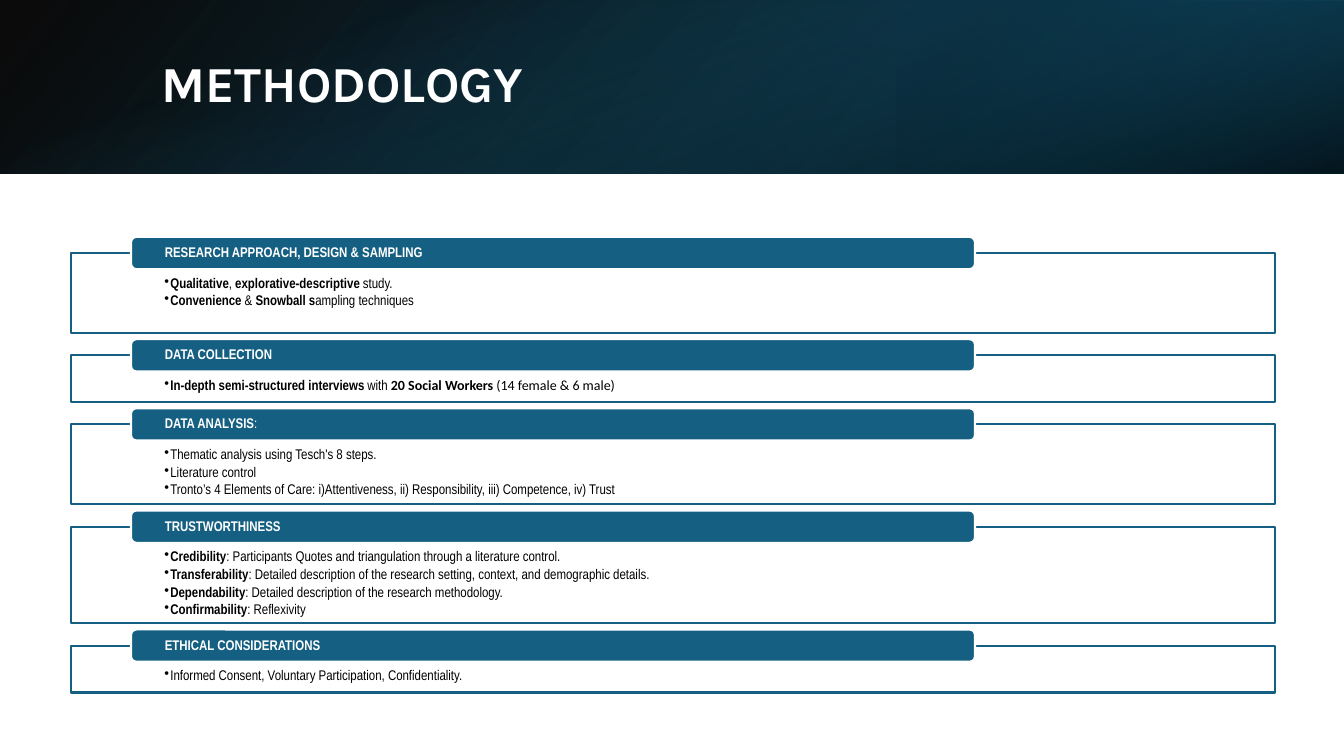
"""Build the Methodology slide: a gradient header above five labelled boxes."""
from lxml.etree import SubElement
from pptx import Presentation
from pptx.dml.color import RGBColor
from pptx.enum.shapes import MSO_SHAPE as Preset
from pptx.enum.text import MSO_ANCHOR as Anchor, MSO_AUTO_SIZE as AutoSize, PP_ALIGN as Align
from pptx.oxml.ns import qn
from pptx.util import Inches, Pt

TITLE = "METHODOLOGY"
NARROW, WIDE = "Arial Narrow", "Calibri"
BLUE, WHITE, BLACK = "156082", "FFFFFF", "000000"

# Each section: heading runs, rows of room, bullets; each run: text, bold, font.
SECTIONS = [
    ([("RESEARCH APPROACH, DESIGN & SAMPLING", True, NARROW)], 3, [
        [("Qualitative", True, NARROW), (", ", False, NARROW),
         ("explorative-descriptive", True, NARROW), (" study.", False, NARROW)],
        [("Convenience", True, NARROW), (" & ", False, NARROW),
         ("Snowball s", True, NARROW), ("ampling techniques", False, NARROW)],
    ]),
    ([("DATA COLLECTION", True, NARROW)], 1, [
        [("In-depth semi-structured interviews ", True, NARROW), ("with ", False, NARROW),
         ("20 Social Workers", True, WIDE), (" (14 female & 6 male)", False, WIDE)],
    ]),
    ([("DATA ANALYSIS", True, NARROW), (":", False, NARROW)], 3, [
        [("Thematic analysis using Tesch's 8 steps.", False, NARROW)],
        [("Literature control", False, NARROW)],
        [("Tronto’s 4 Elements of Care: i)Attentiveness, ii) Responsibility, "
          "iii) Competence, iv) Trust", False, NARROW)],
    ]),
    ([("TRUSTWORTHINESS", True, NARROW)], 4, [
        [("Credibility", True, NARROW),
         (": Participants Quotes and triangulation through a literature control.", False, NARROW)],
        [("Transferability", True, NARROW),
         (": Detailed description of the research setting, context, "
          "and demographic details.", False, NARROW)],
        [("Dependability", True, NARROW),
         (": Detailed description of the research methodology.", False, NARROW)],
        [("Confirmability", True, NARROW), (": Reflexivity", False, NARROW)],
    ]),
    ([("ETHICAL CONSIDERATIONS", True, NARROW)], 1, [
        [("Informed Consent, Voluntary Participation, Confidentiality.", False, NARROW)],
    ]),
]

# Each band: place, rotation, mirrored, clockwise angle, stops of position, colour, opacity.
BANDS = [
    ((0, 0, 13.33, 1.72), 0, True, 140, [(0, BLACK, 96), (100, "104862", 100)]),
    ((8.89, 0, 4.44, 1.72), 180, True, 320, [(19, "0B3041", 68), (100, BLUE, 79)]),
    ((5.81, -5.8, 1.72, 13.33), 90, False, 340, [(23, BLUE, 0), (99, BLACK, 74)]),
]
BOX_LEFT, BOX_WIDTH, FIRST_TOP, BOX_GAP = 0.7, 11.95, 2.51, 0.22
BASE_HEIGHT, ROW_HEIGHT = 0.3, 0.165
TAB_LEFT, TAB_WIDTH, TAB_HEIGHT, TAB_RISE = 1.3, 8.37, 0.32, 0.16


def color(value):
    return RGBColor.from_string(value)


def add_preset(page, preset, place):
    shape = page.shapes.add_shape(preset, *map(Inches, place))
    shape.shadow.inherit = False
    return shape


def set_opacity(shape, percents):
    tints = list(shape.element.spPr.iter(qn("a:srgbClr")))
    for tint, percent in zip(tints, percents):
        SubElement(tint, qn("a:alpha"), val=str(percent * 1000))


def add_band(page, place, rotation, mirrored, angle, stops):
    band = add_preset(page, Preset.RECTANGLE, place)
    band.rotation = rotation
    if mirrored:
        band.element.spPr.find(qn("a:xfrm")).set("flipH", "1")
    band.line.fill.background()
    band.fill.gradient()
    band.fill.gradient_angle = 360 - angle
    for stop, (position, tone, _) in zip(band.fill.gradient_stops, stops):
        stop.position = position / 100
        stop.color.rgb = color(tone)
    set_opacity(band, [opacity for _, _, opacity in stops])


def add_panel(page, preset, place, fill, line, insets, anchor):
    panel = add_preset(page, preset, place)
    panel.fill.solid()
    panel.fill.fore_color.rgb = color(fill)
    panel.line.color.rgb = color(line)
    panel.line.width = Pt(1.5)
    frame = panel.text_frame
    frame.word_wrap = True
    frame.vertical_anchor = anchor
    frame.margin_left, frame.margin_top, frame.margin_right, frame.margin_bottom = map(Inches, insets)
    return panel


def write(para, runs, size, tone):
    para.alignment = Align.LEFT
    para.line_spacing = 0.9
    for text, bold, font in runs:
        span = para.add_run()
        span.text = text
        span.font.size, span.font.bold, span.font.name = Pt(size), bold, font
        span.font.color.rgb = color(tone)


def write_bullets(frame, bullets):
    for index, runs in enumerate(bullets):
        para = frame.add_paragraph() if index else frame.paragraphs[0]
        write(para, runs, 10, BLACK)
        para.level = 1
        para.space_after = Pt(1.75)
        props = para._p.get_or_add_pPr()
        props.set("marL", str(Inches(0.06)))
        props.set("indent", str(-Inches(0.06)))
        SubElement(props, qn("a:buChar"), char="•")


def add_section(page, top, height, heading, bullets):
    box = add_panel(page, Preset.RECTANGLE, (BOX_LEFT, top, BOX_WIDTH, height),
                    WHITE, BLUE, (0.93, 0.23, 0.93, 0.08), Anchor.TOP)
    set_opacity(box, [90])
    write_bullets(box.text_frame, bullets)
    tab = add_panel(page, Preset.ROUNDED_RECTANGLE,
                    (TAB_LEFT, top - TAB_RISE, TAB_WIDTH, TAB_HEIGHT),
                    BLUE, WHITE, (0.32, 0, 0.32, 0), Anchor.MIDDLE)
    write(tab.text_frame.paragraphs[0], heading, 10, WHITE)


def place_title(page):
    title = page.shapes.title
    title.left, title.top, title.width, title.height = map(Inches, (1.5, 0.38, 10.98, 0.96))
    frame = title.text_frame
    frame.auto_size = AutoSize.NONE
    frame.vertical_anchor = Anchor.MIDDLE
    write(frame.paragraphs[0], [(TITLE, True, "Karla")], 36, WHITE)
    page.shapes.element.append(title.element)


def main():
    deck = Presentation()
    deck.slide_width, deck.slide_height = Inches(13.33), Inches(7.5)
    page = deck.slides.add_slide(deck.slide_layouts[5])
    for band in BANDS:
        add_band(page, *band)
    place_title(page)
    top = FIRST_TOP
    for heading, rows, bullets in SECTIONS:
        height = BASE_HEIGHT + ROW_HEIGHT * rows
        add_section(page, top, height, heading, bullets)
        top += height + BOX_GAP
    deck.save("out.pptx")


if __name__ == "__main__":
    main()
